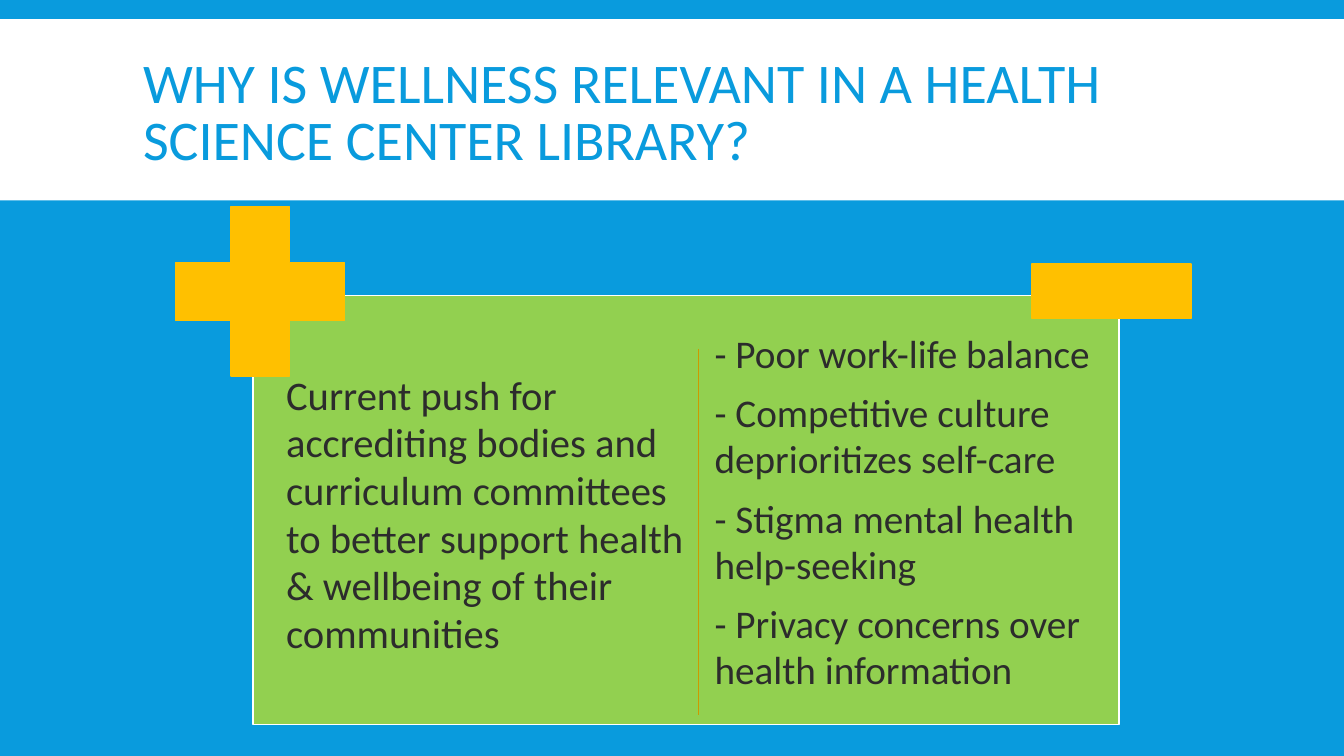
from lxml import etree
from pptx import Presentation
from pptx.dml.color import RGBColor
from pptx.enum.shapes import MSO_CONNECTOR, MSO_SHAPE
from pptx.enum.text import MSO_ANCHOR, MSO_AUTO_SIZE, PP_ALIGN
from pptx.oxml.ns import qn
from pptx.util import Cm, Pt

BLUE, WHITE, GREEN, GOLD = "099BDD", "FFFFFF", "92D050", "FFC000"
DARK_GOLD, INK = "CC9A00", "2C2C2C"

TITLE = "WHY IS WELLNESS RELEVANT IN A HEALTH SCIENCE CENTER LIBRARY?"
PUSH = ["Current push for accrediting bodies and curriculum committees "
        "to better support health & wellbeing of their communities"]
CONCERNS = [
    "- Poor work-life balance",
    "- Competitive culture deprioritizes self-care",
    "- Stigma mental health help-seeking",
    "- Privacy concerns over health information",
]


def colour(hex_string):
    return RGBColor.from_string(hex_string)


def add_block(page, kind, box, fill, line=None):
    block = page.shapes.add_shape(kind, *(Cm(length) for length in box))
    block.shadow.inherit = False
    block.fill.solid()
    block.fill.fore_color.rgb = colour(fill)
    if line:
        block.line.color.rgb = colour(line)
        block.line.width = Pt(1)
    else:
        block.line.fill.background()
    return block


def write_text(frame, lines, size, ink, anchor=MSO_ANCHOR.TOP, spacing=1.0, after=0, inset=None):
    frame.word_wrap = True
    frame.auto_size = MSO_AUTO_SIZE.NONE
    frame.vertical_anchor = anchor
    if inset is not None:
        frame.margin_left = frame.margin_right = Cm(inset)
        frame.margin_top = frame.margin_bottom = Cm(inset)
    for index, line in enumerate(lines):
        para = frame.add_paragraph() if index else frame.paragraphs[0]
        para.alignment = PP_ALIGN.LEFT
        para.line_spacing = spacing
        para.space_before = Pt(0)
        para.space_after = Pt(after)
        span = para.add_run()
        span.text = line
        span.font.name = "Calibri"
        span.font.size = Pt(size)
        span.font.color.rgb = colour(ink)


def add_column(page, box, lines, **style):
    column = page.shapes.add_textbox(*(Cm(length) for length in box))
    write_text(column.text_frame, lines, ink=INK, spacing=0.98, inset=0.15, **style)


def add_header(page, left, top, width, height):
    # White band, sent behind the title
    band = add_block(page, MSO_SHAPE.RECTANGLE, (left, top, width, height), WHITE)
    title = page.shapes.title
    title.element.addprevious(band.element)

    # Title
    title.left, title.top = Cm(left + 3.35), Cm(top + 0.31)
    title.width, title.height = Cm(27.18), Cm(4.19)
    write_text(title.text_frame, [TITLE], size=40, ink=BLUE,
               anchor=MSO_ANCHOR.MIDDLE, spacing=0.85)


def add_plus_minus_panel(page, left, top, width, height):
    # Green panel
    add_block(page, MSO_SHAPE.RECTANGLE, (left, top, width, height), GREEN, WHITE)

    # Arguments for and against
    add_column(page, (left + 0.68, top + 1.78, 10.39, 8.48), PUSH, size=29)
    add_column(page, (left + 11.48, top + 0.66, 10.13, 9.63), CONCERNS, size=28,
               after=9.5, anchor=MSO_ANCHOR.MIDDLE)

    # Plus and minus signs on the upper corners
    plus = add_block(page, MSO_SHAPE.CROSS, (left - 1.96, top - 2.23, 4.27, 4.27), GOLD, GOLD)
    plus.adjustments[0] = 0.328
    add_block(page, MSO_SHAPE.RECTANGLE, (left + width - 2.19, top - 0.79, 4.01, 1.37), GOLD, GOLD)

    # Divider between the columns
    middle = Cm(left + 11.22)
    divider = page.shapes.add_connector(
        MSO_CONNECTOR.STRAIGHT, middle, Cm(top + 1.35), middle, Cm(top + height - 0.25))
    divider.line.color.rgb = colour(DARK_GOLD)
    divider.line.width = Pt(1)
    etree.SubElement(divider.element.spPr, qn("a:effectLst"))


def main():
    deck = Presentation()
    deck.slide_width, deck.slide_height = Cm(33.87), Cm(19.05)
    page = deck.slides.add_slide(deck.slide_layouts.get_by_name("Title Only"))
    page.background.fill.solid()
    page.background.fill.fore_color.rgb = colour(BLUE)
    add_header(page, 0, 0.48, 33.87, 4.57)
    add_plus_minus_panel(page, 6.38, 7.44, 21.82, 10.82)
    deck.save("out.pptx")


if __name__ == "__main__":
    main()
